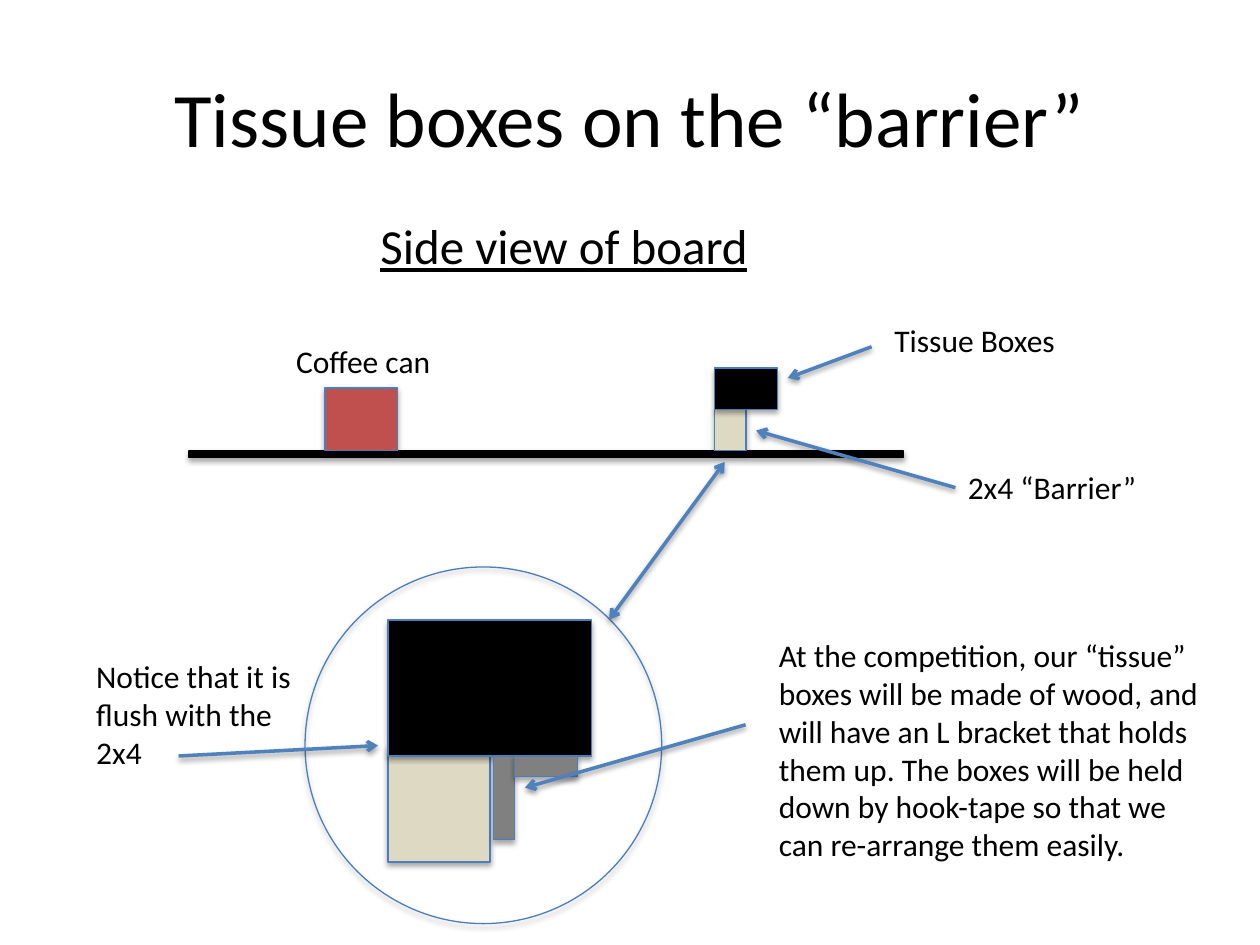
from dataclasses import dataclass
from typing import Optional

from lxml.etree import SubElement
from pptx import Presentation
from pptx.dml.color import RGBColor
from pptx.enum.shapes import MSO_CONNECTOR, MSO_SHAPE
from pptx.enum.text import MSO_ANCHOR, PP_ALIGN
from pptx.oxml.ns import qn
from pptx.util import Cm, Pt


@dataclass(frozen=True)
class Theme:
    font: str = "Calibri"
    title: int = 44
    heading: int = 28
    label: int = 18
    black: str = "000000"
    can: str = "C0504D"
    wood: str = "DDD9C3"
    bracket: str = "808080"
    outline: str = "4B7EBC"
    arrow: str = "4F81BD"


T = Theme()


@dataclass(frozen=True)
class Box:
    x: float
    y: float
    w: float
    h: float
    fill: Optional[str]
    line: str = T.outline
    shape: MSO_SHAPE = MSO_SHAPE.RECTANGLE


@dataclass(frozen=True)
class Arrow:
    x1: float
    y1: float
    x2: float
    y2: float
    double: bool = False


@dataclass(frozen=True)
class Label:
    x: float
    y: float
    w: float
    h: float
    text: str
    size: int = T.label
    wrap: bool = False
    underline: bool = False


BOARD_Y = 9.09
BARRIER_X = 14.4
ZOOM_X = 7.82
BRACKET_Y = 15.24

BOXES = [
    Box(3.81, BOARD_Y, 14.4, 0.13, T.black, T.black),
    Box(6.55, BOARD_Y - 1.27, 1.47, 1.27, T.can),
    Box(BARRIER_X, BOARD_Y - 0.84, 0.64, 0.84, T.wood),
    Box(BARRIER_X, BOARD_Y - 1.67, 1.27, 0.83, T.black),
    Box(6.15, 11.43, 7.19, 7.19, None, shape=MSO_SHAPE.OVAL),
    Box(ZOOM_X, 15.04, 2.06, 2.34, T.wood),
    Box(ZOOM_X, 12.5, 4.11, 2.74, T.black),
    Box(9.95, BRACKET_Y, 0.42, 1.69, T.bracket),
    Box(10.37, BRACKET_Y, 1.27, 0.42, T.bracket),
]

ARROWS = [
    Arrow(19.26, 9.83, 15.24, 8.68),
    Arrow(17.57, 6.99, 15.88, 7.62),
    Arrow(14.61, 9.31, 12.28, 12.49, double=True),
    Arrow(15.03, 14.61, 10.58, 15.88),
    Arrow(3.6, 15.24, 7.62, 15.03),
]

LABELS = [
    Label(7.42, 4.23, 8.03, 1.45, "Side view of board", T.heading, underline=True),
    Label(5.72, 6.77, 3.28, 1.02, "Coffee can"),
    Label(17.78, 6.35, 3.84, 1.02, "Tissue Boxes"),
    Label(19.26, 9.31, 3.91, 1.02, "2x4 “Barrier”"),
    Label(15.45, 12.7, 9.31, 4.88,
          "At the competition, our “tissue” boxes will be made of wood, and will "
          "have an L bracket that holds them up. The boxes will be held down by "
          "hook-tape so that we can re-arrange them easily.", wrap=True),
    Label(1.69, 13.12, 4.66, 2.57, "Notice that it is flush with the 2x4", wrap=True),
]


def rgb(color: str) -> RGBColor:
    return RGBColor.from_string(color)


def add_shadow(sp_pr, dist: int, alpha: int) -> None:
    effects = sp_pr.find(qn("a:effectLst"))
    if effects is None:
        effects = SubElement(sp_pr, qn("a:effectLst"))
    shadow = SubElement(effects, qn("a:outerShdw"), blurRad="40000", dist=str(dist),
                        dir="5400000", rotWithShape="0")
    color = SubElement(shadow, qn("a:srgbClr"), val=T.black)
    SubElement(color, qn("a:alpha"), val=str(alpha * 1000))


def style_text(tf, size: int, underline: bool = False) -> None:
    for p in tf.paragraphs:
        for r in p.runs:
            r.font.name = T.font
            r.font.size = Pt(size)
            r.font.color.rgb = rgb(T.black)
            if underline:
                r.font.underline = True


def draw_box(s, box: Box) -> None:
    sp = s.shapes.add_shape(box.shape, Cm(box.x), Cm(box.y), Cm(box.w), Cm(box.h))
    sp.shadow.inherit = False
    if box.fill:
        sp.fill.solid()
        sp.fill.fore_color.rgb = rgb(box.fill)
    else:
        sp.fill.background()
    sp.line.color.rgb = rgb(box.line)
    sp.line.width = Pt(0.75)
    add_shadow(sp._element.spPr, 23000, 35)


def draw_arrow(s, arrow: Arrow) -> None:
    cx = s.shapes.add_connector(MSO_CONNECTOR.STRAIGHT, Cm(arrow.x1), Cm(arrow.y1),
                                Cm(arrow.x2), Cm(arrow.y2))
    cx.line.color.rgb = rgb(T.arrow)
    cx.line.width = Pt(2)
    ln = cx.line._get_or_add_ln()
    if arrow.double:
        SubElement(ln, qn("a:headEnd"), type="arrow")
    SubElement(ln, qn("a:tailEnd"), type="arrow")
    add_shadow(cx._element.spPr, 20000, 38)


def draw_label(s, label: Label) -> None:
    sp = s.shapes.add_textbox(Cm(label.x), Cm(label.y), Cm(label.w), Cm(label.h))
    tf = sp.text_frame
    tf.word_wrap = label.wrap
    tf.text = label.text
    style_text(tf, label.size, label.underline)


def draw_title(s, text: str) -> None:
    sp = s.shapes.title
    sp.left, sp.top, sp.width, sp.height = Cm(1.27), Cm(0.76), Cm(22.86), Cm(3.18)
    tf = sp.text_frame
    tf.text = text
    tf.vertical_anchor = MSO_ANCHOR.MIDDLE
    tf.paragraphs[0].alignment = PP_ALIGN.CENTER
    style_text(tf, T.title)


def main() -> None:
    prs = Presentation()
    prs.slide_width, prs.slide_height = Cm(25.4), Cm(19.05)
    s = prs.slides.add_slide(prs.slide_layouts[5])
    draw_title(s, "Tissue boxes on the “barrier”")
    for box in BOXES:
        draw_box(s, box)
    for arrow in ARROWS:
        draw_arrow(s, arrow)
    for label in LABELS:
        draw_label(s, label)
    prs.save("out.pptx")


if __name__ == "__main__":
    main()
